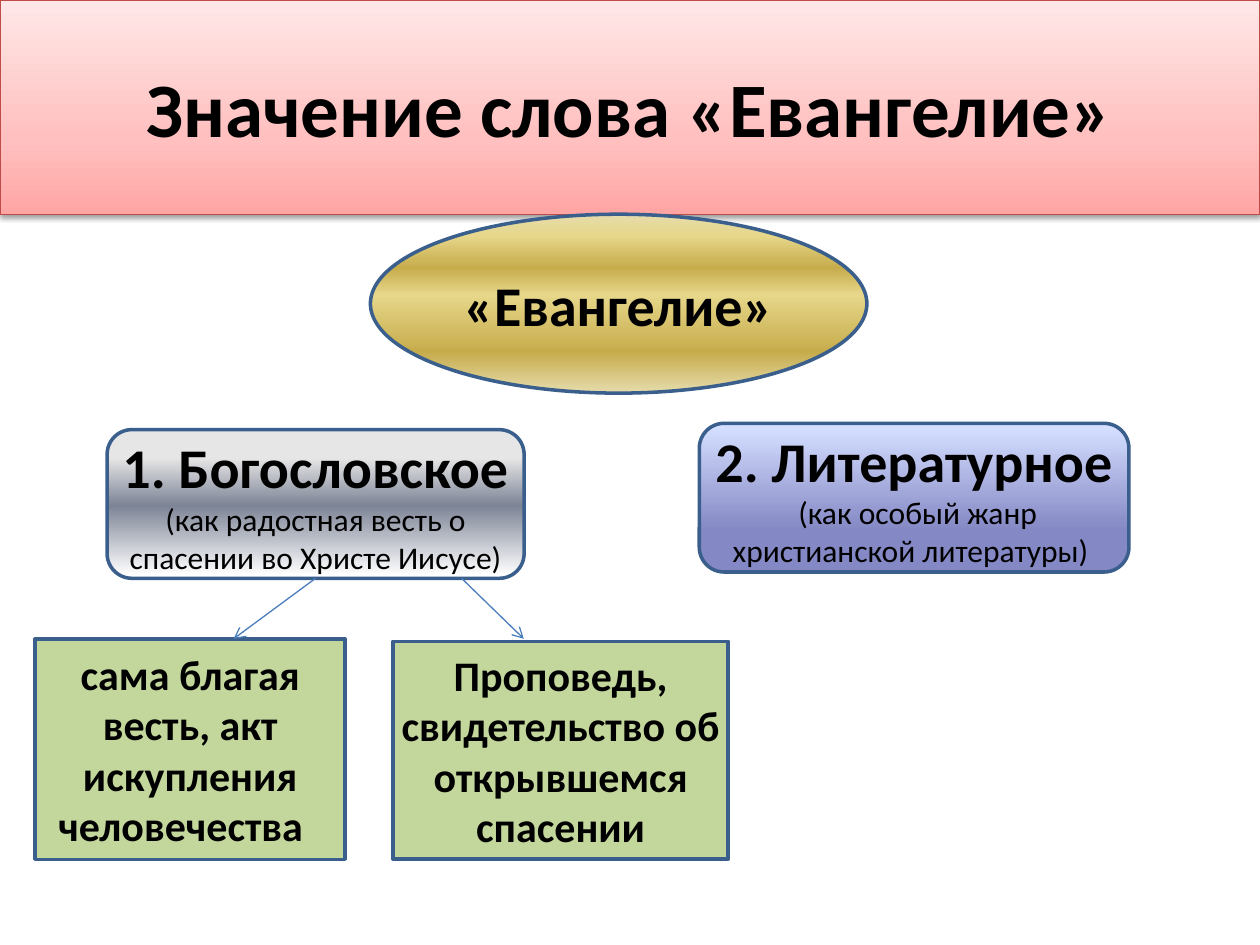
from collections import namedtuple

from lxml.etree import SubElement
from pptx import Presentation
from pptx.dml.color import RGBColor
from pptx.enum.shapes import MSO_CONNECTOR as Link, MSO_SHAPE as Form
from pptx.enum.text import MSO_ANCHOR as Anchor, PP_ALIGN as Align
from pptx.oxml.ns import qn
from pptx.util import Inches, Pt

Box = namedtuple("Box", "left top width height")
WIDTH, HEIGHT = Inches(10), Inches(7.5)
COLUMN, ROW = WIDTH / 100, HEIGHT / 75

BLACK = RGBColor(0x00, 0x00, 0x00)
RED = RGBColor(0xBF, 0x4C, 0x48)
NAVY = RGBColor(0x3A, 0x5F, 0x8C)
BLUE = RGBColor(0x4B, 0x7E, 0xBC)
GREEN = RGBColor(0xC3, 0xD6, 0x9B)
SAND = RGBColor(0xE6, 0xDC, 0xAC)
STRAW = RGBColor(0xE6, 0xD7, 0x8A)
BRONZE = RGBColor(0xC7, 0xAC, 0x4C)
SILVER = RGBColor(0xE6, 0xE6, 0xE6)

ROSE = [(0, RGBColor(0xFF, 0xA6, 0xA5)), (35, RGBColor(0xFF, 0xC0, 0xBF)),
        (100, RGBColor(0xFF, 0xE7, 0xE7))]
STEEL = [(2, RGBColor(0xFF, 0xFF, 0xFF)), (49, RGBColor(0x7D, 0x84, 0x96)),
         (81, SILVER), (83, SILVER)]
GOLD = [(0, SAND), (12, STRAW), (30, BRONZE), (45, STRAW), (77, BRONZE), (100, SAND)]
VIOLET = [(28, RGBColor(0x84, 0x88, 0xC4)), (97, RGBColor(0xD4, 0xDE, 0xFF))]


def grid(left, top, width, height):
    return Box(round(left * COLUMN), round(top * ROW),
               round(width * COLUMN), round(height * ROW))


def paint(shape, colour, line, weight, angle=90):
    if isinstance(colour, RGBColor):
        shape.fill.solid()
        shape.fill.fore_color.rgb = colour
    else:
        shape.fill.gradient()
        shape.fill.gradient_angle = angle
        stops = next(shape._element.spPr.iter(qn("a:gsLst")))
        for stop in list(stops):
            stops.remove(stop)
        for percent, shade in colour:
            stop = SubElement(stops, qn("a:gs"), pos=str(percent * 1000))
            SubElement(stop, qn("a:srgbClr"), val=str(shade))
    shape.line.color.rgb = line
    shape.line.width = Pt(weight)
    shape.shadow.inherit = False


def write(shape, *lines, inset=None):
    frame = shape.text_frame
    frame.word_wrap = True
    frame.vertical_anchor = Anchor.MIDDLE
    if inset is not None:
        frame.margin_left = frame.margin_right = Inches(inset)
        frame.margin_top = frame.margin_bottom = Inches(inset)
    for number, (words, size, bold) in enumerate(lines):
        paragraph = frame.add_paragraph() if number else frame.paragraphs[0]
        paragraph.alignment = Align.CENTER
        run = paragraph.add_run()
        run.text = words
        run.font.name = "Calibri"
        run.font.size = Pt(size)
        run.font.bold = bold
        run.font.color.rgb = BLACK


def heading(slide, box):
    title = slide.shapes.title
    title.left, title.top, title.width, title.height = box
    paint(title, ROSE, RED, 0.75)
    effects = title._element.spPr.find(qn("a:effectLst"))
    shadow = SubElement(effects, qn("a:outerShdw"), blurRad=str(Pt(3.1)),
                        dist=str(Pt(1.6)), dir="5400000", rotWithShape="0")
    black = SubElement(shadow, qn("a:srgbClr"), val=str(BLACK))
    SubElement(black, qn("a:alpha"), val="38000")
    write(title, ("Значение слова «Евангелие»", 44, True))


def panel(slide, form, box, colour, *lines, inset=0.04, angle=90):
    shape = slide.shapes.add_shape(form, *box)
    paint(shape, colour, NAVY, 2, angle)
    write(shape, *lines, inset=inset)
    return shape


def arrow(slide, start, end):
    link = slide.shapes.add_connector(Link.STRAIGHT, *start, *end)
    link.line.color.rgb = BLUE
    link.line.width = Pt(0.75)
    SubElement(link.line._get_or_add_ln(), qn("a:tailEnd"), type="arrow")
    SubElement(link._element.spPr, qn("a:effectLst"))
    return link


def theological_branch(slide, box, gospel, sermon):
    meaning = panel(slide, Form.ROUNDED_RECTANGLE, box, STEEL,
                    ("1. Богословское ", 32, True),
                    ("(как радостная весть о спасении во Христе Иисусе)", 18, False))
    panel(slide, Form.RECTANGLE, gospel, GREEN,
          ("сама благая весть, акт искупления человечества  ", 24, True))
    panel(slide, Form.RECTANGLE, sermon, GREEN, ("Проповедь,", 24, True),
          ("свидетельство об открывшемся спасении", 24, True), inset=0)
    bottom = box.top + box.height
    to_gospel = arrow(slide, (box.left + box.width // 2, bottom),
                      (gospel.left + round(gospel.width * 0.64), gospel.top))
    to_gospel.begin_connect(meaning, 2)
    arrow(slide, (box.left + round(box.width * 0.85), bottom),
          (sermon.left + round(sermon.width * 0.39), gospel.top))


def main():
    deck = Presentation()
    deck.slide_width, deck.slide_height = WIDTH, HEIGHT
    slide = deck.slides.add_slide(deck.slide_layouts[5])
    heading(slide, grid(0, 0, 100, 17))
    theological_branch(slide, grid(8.5, 34.1, 33.1, 11.8),
                       grid(2.8, 50.7, 24.6, 17.5), grid(31.2, 50.9, 26.6, 17.3))
    panel(slide, Form.OVAL, grid(29.4, 17, 39.4, 14.2), GOLD,
          ("«Евангелие»", 32, True), inset=None, angle=270)
    panel(slide, Form.ROUNDED_RECTANGLE, grid(55.5, 33.6, 34.1, 11.8), VIOLET,
          ("2. Литературное ", 32, True),
          (" (как особый жанр христианской литературы) ", 18, False))
    deck.save("out.pptx")


if __name__ == "__main__":
    main()
